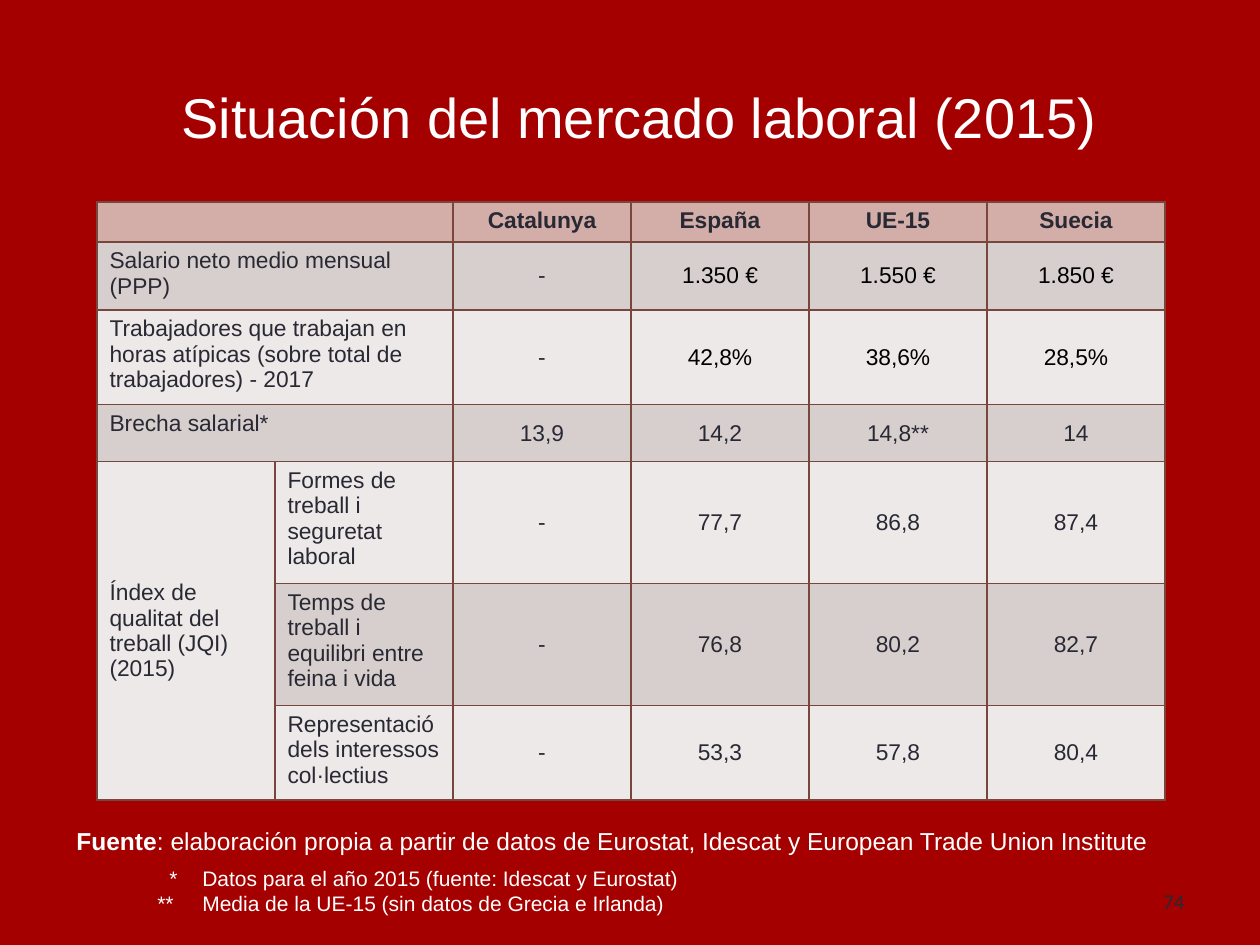
from lxml import etree
from pptx import Presentation
from pptx.dml.color import RGBColor
from pptx.enum.text import MSO_ANCHOR, PP_ALIGN
from pptx.oxml.ns import qn
from pptx.util import Emu, Pt

LEFT, CENTER, RIGHT = PP_ALIGN.LEFT, PP_ALIGN.CENTER, PP_ALIGN.RIGHT
TOP, MIDDLE = MSO_ANCHOR.TOP, MSO_ANCHOR.MIDDLE
RED, WHITE, BLACK, INK = "A40000", "FFFFFF", "000000", "292934"
HEAD, DARK, LIGHT, EDGE = "D3AEA8", "D7CFCE", "ECE9E8", "79463D"

COL = 178
HEIGHTS = [40, 68, 94, 57, 122, 122, 94]
INDEX = "Índex de qualitat del treball (JQI) (2015)"
ROWS = [
    ["", "", "Catalunya", "España", "UE-15", "Suecia"],
    ["Salario neto medio mensual (PPP)", "", "-", "1.350 €", "1.550 €", "1.850 €"],
    ["Trabajadores que trabajan en horas atípicas (sobre total de trabajadores) - 2017",
     "", "-", "42,8%", "38,6%", "28,5%"],
    ["Brecha salarial*", "", "13,9", "14,2", "14,8**", "14"],
    [INDEX, "Formes de treball i seguretat laboral", "-", "77,7", "86,8", "87,4"],
    ["", "Temps de treball i equilibri entre feina i vida", "-", "76,8", "80,2", "82,7"],
    ["", "Representació dels interessos col·lectius", "-", "53,3", "57,8", "80,4"],
]
# Mark, start of the mark and text of each footnote
NOTES = [
    ("*", 93, "Datos para el año 2015 (fuente: Idescat y Eurostat)"),
    ("**", 81, "Media de la UE-15 (sin datos de Grecia e Irlanda)"),
]
NOTE_X = 126


def px(n):
    return Emu(round(n * 914400 / 126))


def rgb(code):
    return RGBColor.from_string(code)


def style(para, size, color, align=LEFT, bold=False, face="Arial"):
    para.alignment = align
    font = para.font
    font.name, font.size, font.bold = face, Pt(size), bold
    font.color.rgb = rgb(color)


def add_title(slide, text):
    title = slide.shapes.title
    title.left, title.top, title.width, title.height = map(px, (63, 38, 1153, 157))
    title.text_frame.text = text
    title.text_frame.vertical_anchor = MIDDLE
    style(title.text_frame.paragraphs[0], 32, WHITE, CENTER)


def add_box(slide, x, y, w, h, anchor=TOP):
    frame = slide.shapes.add_textbox(px(x), px(y), px(w), px(h)).text_frame
    frame.word_wrap = True
    frame.vertical_anchor = anchor
    return frame


def add_source(slide):
    para = add_box(slide, 64, 820, 1132, 43).paragraphs[0]
    style(para, 14, WHITE)
    para.add_run().text = "Fuente"
    para.runs[0].font.bold = True
    para.add_run().text = (": elaboración propia a partir de datos de Eurostat, "
                           "Idescat y European Trade Union Institute")


def add_notes(slide):
    """Hang each footnote so that marks differ in start and texts line up."""
    frame = add_box(slide, 64, 859, 1132, 63)
    for i, (mark, start, text) in enumerate(NOTES):
        para = frame.add_paragraph() if i else frame.paragraphs[0]
        para.text = f"{mark}\t{text}"
        style(para, 12, WHITE)
        props = para._p.get_or_add_pPr()
        props.set("marL", str(px(NOTE_X)))
        props.set("indent", str(px(start - NOTE_X)))


def add_number(slide, text):
    para = add_box(slide, 903, 876, 294, 50, MIDDLE).paragraphs[0]
    para.text = text
    style(para, 12, INK, RIGHT, face="Calibri")


def edge(cell):
    props = cell._tc.get_or_add_tcPr()
    for side in ("lnL", "lnR", "lnT", "lnB"):
        line = etree.SubElement(props, qn(f"a:{side}"), w=str(Pt(1)))
        fill = etree.SubElement(line, qn("a:solidFill"))
        etree.SubElement(fill, qn("a:srgbClr"), val=EDGE)


def fill_cell(cell, text, row, col):
    edge(cell)
    cell.fill.solid()
    cell.fill.fore_color.rgb = rgb(HEAD if row == 0 else DARK if row % 2 else LIGHT)
    value = col > 1
    middle = text == INDEX or (value and row > 0)
    cell.vertical_anchor = MIDDLE if middle else TOP
    cell.text = text
    black = row in (1, 2) and col > 2
    if black:
        cell.margin_left = cell.margin_right = 0
        cell.margin_top = cell.margin_bottom = 0
    style(cell.text_frame.paragraphs[0], 13, BLACK if black else INK,
          CENTER if value else LEFT, bold=row == 0)


def add_grid(slide):
    cols = len(ROWS[0])
    table = slide.shapes.add_table(len(ROWS), cols, px(97), px(202),
                                   px(COL * cols), px(sum(HEIGHTS))).table
    for col in table.columns:
        col.width = px(COL)
    for r, (row, high) in enumerate(zip(ROWS, HEIGHTS)):
        table.rows[r].height = px(high)
        for c, text in enumerate(row):
            fill_cell(table.cell(r, c), text, r, c)
    for r in range(4):
        table.cell(r, 0).merge(table.cell(r, 1))
    table.cell(4, 0).merge(table.cell(6, 0))


def main():
    deck = Presentation()
    deck.slide_width, deck.slide_height = px(1260), px(945)
    slide = deck.slides.add_slide(deck.slide_layouts[5])
    back = slide.background.fill
    back.solid()
    back.fore_color.rgb = rgb(RED)
    add_title(slide, "Situación del mercado laboral (2015)")
    add_notes(slide)
    add_number(slide, "74")
    add_source(slide)
    add_grid(slide)
    deck.save("out.pptx")


if __name__ == "__main__":
    main()
